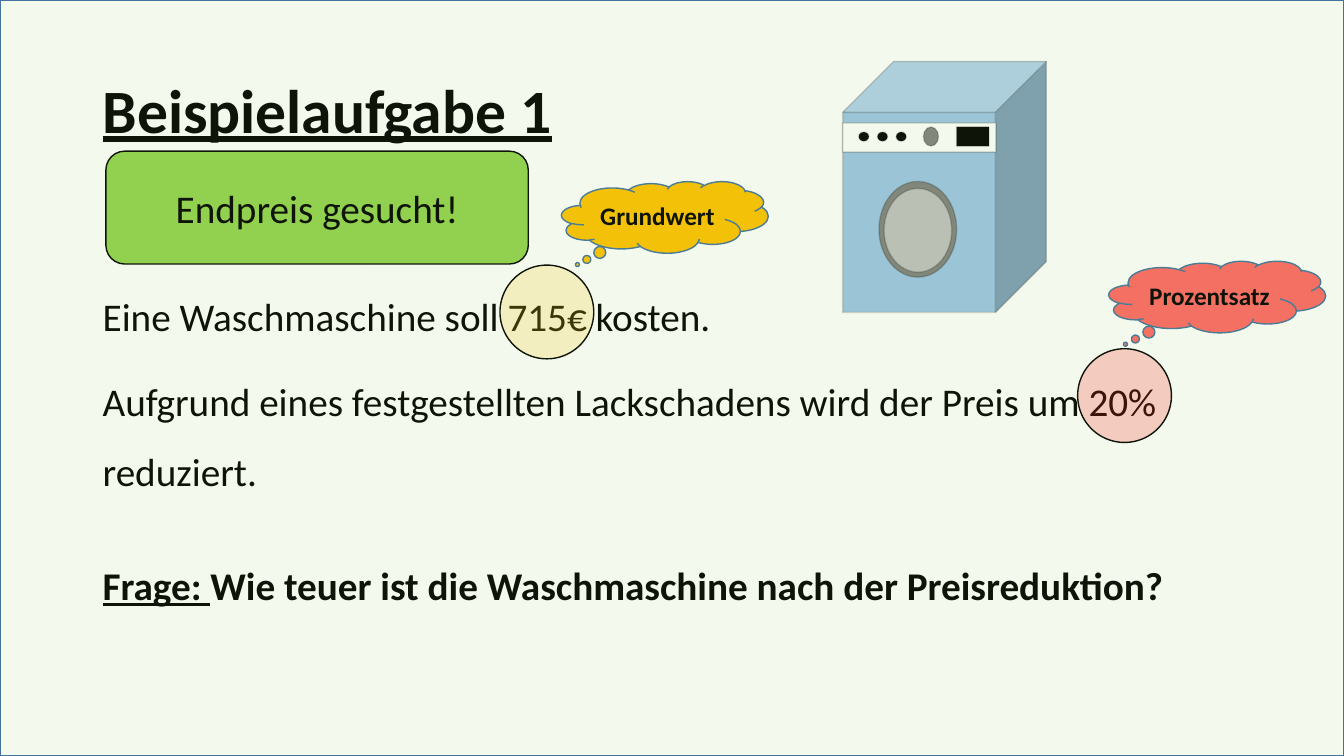
from dataclasses import dataclass
from typing import Any, Optional

import lxml.etree
import pptx
import pptx.dml.color
import pptx.enum.shapes
import pptx.enum.text
import pptx.oxml.ns
import pptx.util

MSO = pptx.enum.shapes.MSO_SHAPE
ANCHOR = pptx.enum.text.MSO_ANCHOR
ALIGN = pptx.enum.text.PP_ALIGN


@dataclass(frozen=True)
class Theme:
    font: str = "Calibri"
    title: int = 44
    body: int = 28
    label: int = 18
    black: str = "000000"
    white: str = "FFFFFF"
    steel: str = "9DC3E6"
    grey: str = "808080"
    silver: str = "BFBFBF"
    amber: str = "FFC000"
    red: str = "FF0000"
    green: str = "92D050"
    outline: str = "43739E"


@dataclass(frozen=True)
class Box:
    """Left, top, width and height in percent of the slide."""
    x: float
    y: float
    w: float
    h: float


@dataclass(frozen=True)
class Run:
    text: str
    size: int
    bold: bool = False
    underline: bool = False


@dataclass(frozen=True)
class Figure:
    kind: Any
    box: Box
    fill: str
    line: str = "000000"
    fill_alpha: int = 100
    line_alpha: int = 100
    label: Optional[Run] = None
    adjust: tuple[float, ...] = ()


@dataclass(frozen=True)
class Copy:
    box: Box
    paragraphs: tuple[tuple[Run, ...], ...]
    frame: dict[str, Any]
    spacing: dict[str, Any]


T = Theme()
LEFT = 6.9
TAIL = (-0.423, 0.662)


def part(kind: Any, box: Box, fill: str) -> Figure:
    return Figure(kind, box, fill, line_alpha=20)


def marker(x: float, y: float, fill: str) -> Figure:
    return Figure(MSO.OVAL, Box(x, y, 6.98, 12.4), fill, fill_alpha=20)


def cloud(box: Box, fill: str, text: str, alpha: int = 100) -> Figure:
    return Figure(MSO.CLOUD_CALLOUT, box, fill, T.outline, alpha,
                  label=Run(text, T.label, bold=True), adjust=TAIL)


KNOBS = [part(MSO.OVAL, Box(63.9 + 1.39 * i, 17.47, 0.75, 1.2), T.black)
         for i in range(3)]

WASHER = [
    part(MSO.CUBE, Box(62.7, 8.13, 15.15, 33.2), T.steel),
    part(MSO.RECTANGLE, Box(62.7, 16.27, 11.4, 3.87), T.white),
    part(MSO.OVAL, Box(65.4, 24, 5.78, 12.67), T.grey),
    part(MSO.OVAL, Box(65.78, 24.93, 5.03, 11.07), T.silver),
    *KNOBS,
    part(MSO.RECTANGLE, Box(71.18, 16.8, 2.4, 2.53), T.black),
    part(MSO.OVAL, Box(68.7, 16.8, 1.13, 2.53), T.grey),
]

COPY = [
    Copy(Box(LEFT, 5.33, 86.25, 19.33),
         ((Run("Beispielaufgabe 1", T.title, True, True),),),
         {"word_wrap": True, "vertical_anchor": ANCHOR.MIDDLE},
         {"line_spacing": 0.9}),
    Copy(Box(LEFT, 34.93, 86.25, 63.47),
         ((Run("Eine Waschmaschine soll 715€ kosten.", T.body),),
          (Run("Aufgrund eines festgestellten Lackschadens wird der Preis "
               "um 20% reduziert.", T.body),)),
         {"word_wrap": True},
         {"line_spacing": 1.5, "space_before": pptx.util.Pt(10)}),
    Copy(Box(LEFT, 73.6, 81.38, 7.6),
         ((Run("Frage: ", T.body, True, True),
           Run("Wie teuer ist die Waschmaschine nach der Preisreduktion?",
               T.body, True)),),
         {"word_wrap": False}, {}),
]

NOTES = [
    marker(37.2, 35.07, T.amber),
    cloud(Box(41.78, 24, 15.38, 9.47), T.amber, "Grundwert"),
    marker(80.18, 46.13, T.red),
    cloud(Box(82.5, 34.53, 16.13, 9.47), T.red, "Prozentsatz", 60),
    Figure(MSO.ROUNDED_RECTANGLE, Box(7.88, 20, 31.43, 14.93), T.green,
           label=Run("Endpreis gesucht!", T.body)),
    Figure(MSO.RECTANGLE, Box(0, 0, 100, 100), T.green, T.outline, 10),
]


def apply(target: Any, values: dict[str, Any]) -> None:
    for name, value in values.items():
        setattr(target, name, value)


def place(prs: Any, box: Box) -> list[int]:
    width, height = prs.slide_width, prs.slide_height
    return [round(share * full / 100) for share, full in
            zip((box.x, box.y, box.w, box.h), (width, height, width, height))]


def paint(fill: Any, element: Any, color: str, alpha: int) -> None:
    fill.solid()
    fill.fore_color.rgb = pptx.dml.color.RGBColor.from_string(color)
    if alpha < 100:
        qn = pptx.oxml.ns.qn
        clr = element.find(qn("a:solidFill")).find(qn("a:srgbClr"))
        lxml.etree.SubElement(clr, qn("a:alpha"), val=str(alpha * 1000))


def write(p: Any, run: Run) -> None:
    r = p.add_run()
    r.text = run.text
    apply(r.font, {"name": T.font, "size": pptx.util.Pt(run.size),
                   "bold": run.bold, "underline": run.underline})
    r.font.color.rgb = pptx.dml.color.RGBColor.from_string(T.black)


def draw_figure(prs: Any, shapes: Any, figure: Figure) -> None:
    sp = shapes.add_shape(figure.kind, *place(prs, figure.box))
    sp.shadow.inherit = False
    for i, value in enumerate(figure.adjust):
        sp.adjustments[i] = value
    props = sp.element.spPr
    paint(sp.fill, props, figure.fill, figure.fill_alpha)
    sp.line.width = pptx.util.Pt(1)
    paint(sp.line.fill, props.find(pptx.oxml.ns.qn("a:ln")),
          figure.line, figure.line_alpha)
    if figure.label:
        tf = sp.text_frame
        apply(tf, {"word_wrap": False, "vertical_anchor": ANCHOR.MIDDLE})
        p = tf.paragraphs[0]
        p.alignment = ALIGN.CENTER
        write(p, figure.label)


def draw_copy(prs: Any, shapes: Any, copy: Copy) -> None:
    tf = shapes.add_textbox(*place(prs, copy.box)).text_frame
    apply(tf, copy.frame)
    for i, runs in enumerate(copy.paragraphs):
        p = tf.add_paragraph() if i else tf.paragraphs[0]
        apply(p, copy.spacing)
        for run in runs:
            write(p, run)


def main() -> None:
    prs = pptx.Presentation()
    apply(prs, {"slide_width": pptx.util.Inches(13.33),
                "slide_height": pptx.util.Inches(7.5)})
    s = prs.slides.add_slide(prs.slide_layouts[6])
    washer = s.shapes.add_group_shape()
    for figure in WASHER:
        draw_figure(prs, washer.shapes, figure)
    for copy in COPY:
        draw_copy(prs, s.shapes, copy)
    for figure in NOTES:
        draw_figure(prs, s.shapes, figure)
    prs.save("out.pptx")


if __name__ == "__main__":
    main()
